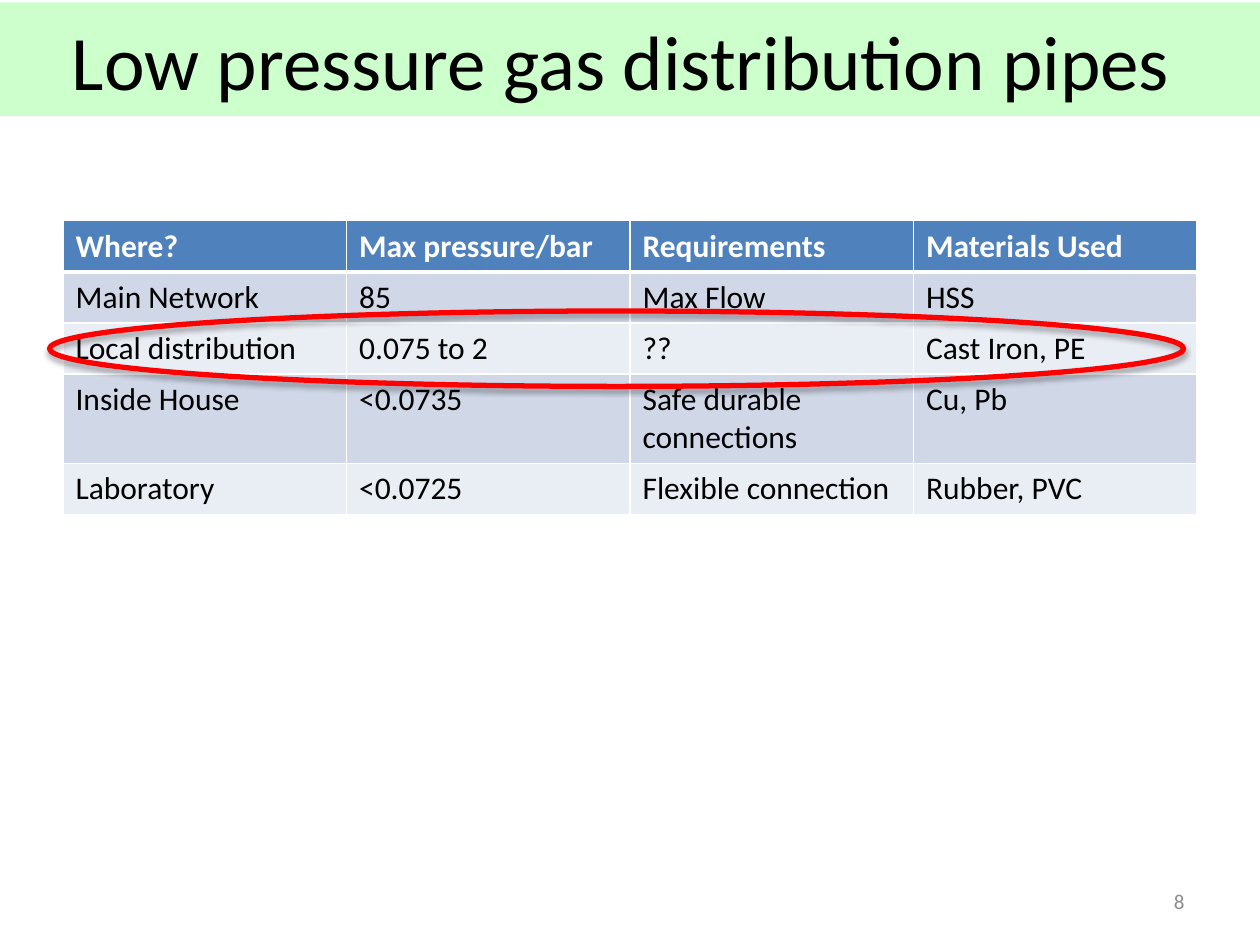
from dataclasses import dataclass

from lxml.etree import SubElement
from pptx import Presentation
from pptx.dml.color import RGBColor as Rgb
from pptx.enum.shapes import MSO_SHAPE as Shape
from pptx.enum.text import MSO_ANCHOR as Anchor, PP_ALIGN as Align
from pptx.oxml.ns import qn
from pptx.util import Cm, Pt


@dataclass(frozen=True)
class Theme:
    """Colours, font and type sizes of the slide."""
    font: str = "Calibri"
    title_size: int = 44
    table_size: int = 18
    number_size: int = 12
    text: str = "000000"
    white: str = "FFFFFF"
    muted: str = "8C8C8C"
    band: str = "CCFFCC"
    header: str = "4F81BD"
    stripes: tuple = ("D0D8E8", "E9EDF4")
    highlight: str = "FF0000"


THEME = Theme()
PIPES = [
    ("Where?", "Max pressure/bar", "Requirements", "Materials Used"),
    ("Main Network", "85", "Max Flow", "HSS"),
    ("Local distribution", "0.075 to 2", "??", "Cast Iron, PE"),
    ("Inside House", "<0.0735", "Safe durable connections", "Cu, Pb"),
    ("Laboratory", "<0.0725", "Flexible connection", "Rubber, PVC"),
]


def write(frame, text, *, size, color=THEME.text, bold=False, align=Align.LEFT):
    """Put one formatted paragraph in a text frame."""
    frame.word_wrap = True
    paragraph = frame.paragraphs[0]
    paragraph.alignment = align
    run = paragraph.add_run()
    run.text = text
    run.font.name = THEME.font
    run.font.size = Pt(size)
    run.font.bold = bold
    run.font.color.rgb = Rgb.from_string(color)


def paint(fill, color):
    """Give a fill one solid colour."""
    fill.solid()
    fill.fore_color.rgb = Rgb.from_string(color)


def add_title(slide, text, width):
    """Add the title on its full-width band."""
    band = slide.shapes.add_shape(Shape.RECTANGLE, 0, Cm(0.05), width, Cm(2.29))
    band.shadow.inherit = False
    paint(band.fill, THEME.band)
    band.line.fill.background()
    band.text_frame.vertical_anchor = Anchor.MIDDLE
    write(band.text_frame, text, size=THEME.title_size, align=Align.CENTER)


def set_borders(cell, bottom):
    """Draw white cell borders, with the given bottom width in points."""
    properties = cell._tc.get_or_add_tcPr()
    for side, width in (("L", 1), ("R", 1), ("T", 1), ("B", bottom)):
        border = SubElement(properties, qn(f"a:ln{side}"), w=str(Pt(width)))
        solid = SubElement(border, qn("a:solidFill"))
        SubElement(solid, qn("a:srgbClr"), val=THEME.white)


def add_pipe_table(slide, rows):
    """Add the table with a header row and striped body rows."""
    row_height = Cm(1.03)
    table = slide.shapes.add_table(
        len(rows), len(rows[0]), Cm(1.27), Cm(4.45), Cm(22.86), row_height * len(rows)
    ).table
    for row_index, row in enumerate(rows):
        is_header = row_index == 0
        table.rows[row_index].height = row_height
        for column_index, text in enumerate(row):
            cell = table.cell(row_index, column_index)
            set_borders(cell, bottom=3 if is_header else 1)
            paint(cell.fill, THEME.header if is_header else THEME.stripes[(row_index - 1) % 2])
            write(cell.text_frame, text, size=THEME.table_size, bold=is_header,
                  color=THEME.white if is_header else THEME.text)


def add_highlight(slide):
    """Ring the local distribution row with a softly shadowed ellipse."""
    ring = slide.shapes.add_shape(Shape.OVAL, Cm(1), Cm(6.27), Cm(22.86), Cm(1.52))
    ring.fill.background()
    ring.line.color.rgb = Rgb.from_string(THEME.highlight)
    ring.line.width = Pt(3)
    ring.shadow.inherit = False
    effects = ring._element.spPr.find(qn("a:effectLst"))
    shadow = SubElement(effects, qn("a:outerShdw"), blurRad=str(Pt(3.1)),
                        dist=str(Pt(1.8)), dir="5400000", rotWithShape="0")
    tint = SubElement(shadow, qn("a:srgbClr"), val=THEME.text)
    SubElement(tint, qn("a:alpha"), val="35000")


def add_slide_number(slide, number):
    """Add the slide number at the lower right."""
    box = slide.shapes.add_textbox(Cm(18.21), Cm(17.65), Cm(5.92), Cm(1.02))
    box.text_frame.vertical_anchor = Anchor.MIDDLE
    write(box.text_frame, number, size=THEME.number_size, color=THEME.muted, align=Align.RIGHT)


def main():
    """Build and save the slide."""
    deck = Presentation()
    deck.slide_width, deck.slide_height = Cm(25.4), Cm(19.05)
    slide = deck.slides.add_slide(deck.slide_layouts[6])
    add_title(slide, "Low pressure gas distribution pipes ", deck.slide_width)
    add_pipe_table(slide, PIPES)
    add_highlight(slide)
    add_slide_number(slide, "8")
    deck.save("out.pptx")


if __name__ == "__main__":
    main()
